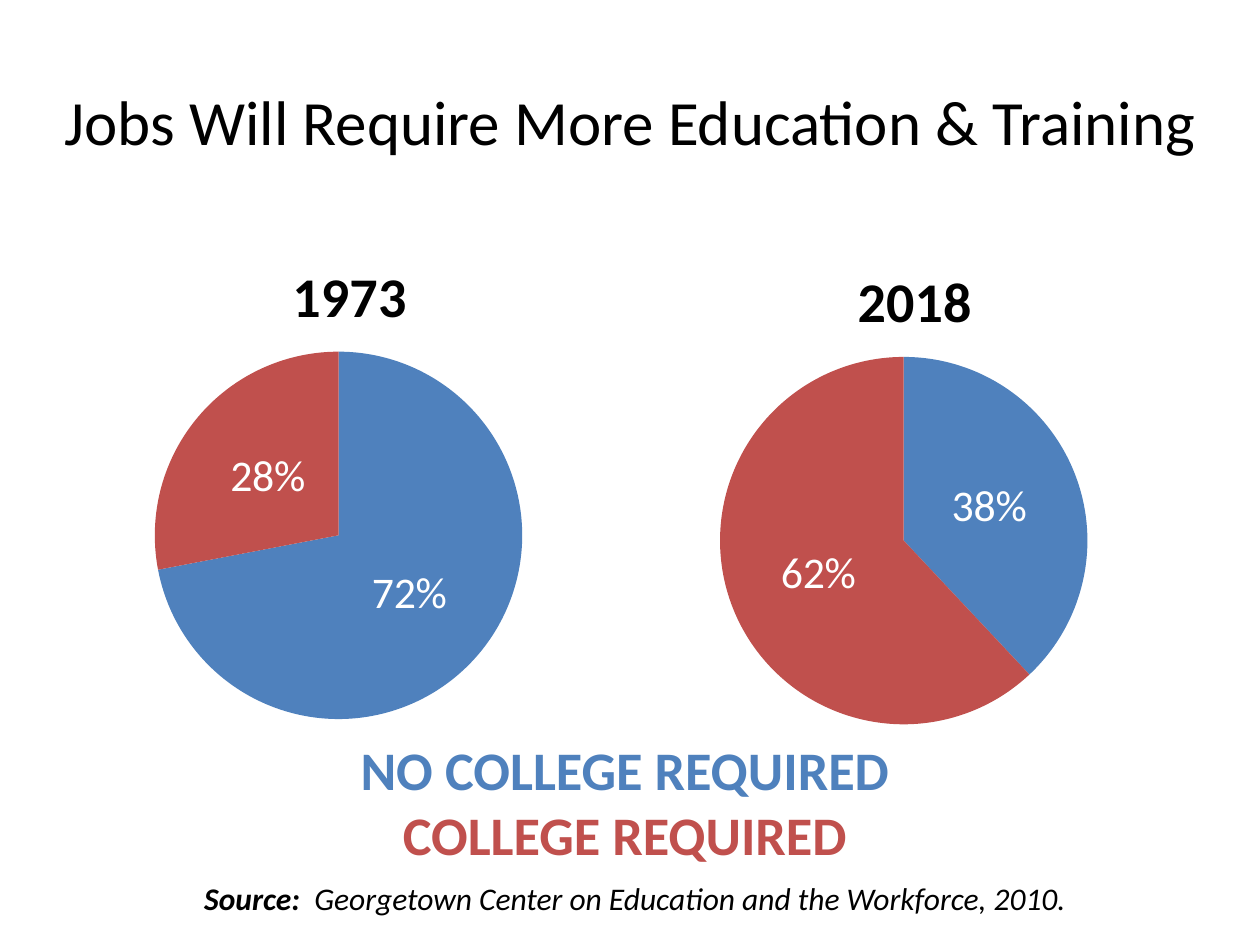
from lxml import etree
from pptx import Presentation
from pptx.chart.data import CategoryChartData
from pptx.dml.color import RGBColor
from pptx.enum.chart import XL_CHART_TYPE, XL_LABEL_POSITION
from pptx.enum.text import MSO_ANCHOR, PP_ALIGN
from pptx.oxml.ns import qn
from pptx.util import Pt

PIE = XL_CHART_TYPE.PIE
MID = XL_LABEL_POSITION.CENTER
CENTER = PP_ALIGN.CENTER
MIDDLE = MSO_ANCHOR.MIDDLE
BLACK, WHITE, BLUE, RED = "000000", "FFFFFF", "4F81BD", "C0504D"


def color(hex):
    return RGBColor.from_string(hex)


def layout(**vals):
    root = etree.Element(qn("c:layout"))
    node = etree.SubElement(root, qn("c:manualLayout"))
    for name, val in vals.items():
        etree.SubElement(node, qn("c:" + name)).set("val", str(val))
    return root


class Deck:
    face = "Calibri"

    def __init__(self, slide):
        self.slide = slide

    def style(self, font, hex, **form):
        for name, val in {"name": self.face, **form}.items():
            setattr(font, name, val)
        font.color.rgb = color(hex)

    def fill(self, frame, lines):
        frame.word_wrap = True
        for i, runs in enumerate(lines):
            par = frame.add_paragraph() if i else frame.paragraphs[0]
            par.alignment = CENTER
            for text, hex, form in runs:
                run = par.add_run()
                run.text = text
                self.style(run.font, hex, **form)

    def place(self, shape, left, top, width, height):
        box = {"left": left, "top": top, "width": width, "height": height}
        for name, val in box.items():
            setattr(shape, name, Pt(val))

    def title(self, text, box, size):
        shape = self.slide.shapes.title
        self.place(shape, *box)
        shape.text_frame.vertical_anchor = MIDDLE
        self.fill(shape.text_frame, [[(text, BLACK, {"size": Pt(size)})]])

    def text(self, box, lines):
        shape = self.slide.shapes.add_textbox(*map(Pt, box))
        self.fill(shape.text_frame, lines)

    def pie(self, year, vals, left, top):
        data = CategoryChartData()
        data.categories = ["1", "2"]
        data.add_series(year, vals)
        box = map(Pt, (left, top, 306, 300))
        chart = self.slide.shapes.add_chart(PIE, *box, data).chart
        self.style(chart.font, BLACK, size=Pt(18))
        chart.has_legend = False
        chart.has_title = True
        head = chart.chart_title
        self.fill(head.text_frame, [[(year, BLACK, {"size": Pt(32), "bold": True})]])
        root = head._element
        for old in root.findall(qn("c:layout")):
            root.remove(old)
        root.find(qn("c:tx")).addnext(layout(xMode="edge", yMode="edge", x=0.39, y=0.06))

        area = chart._chartSpace.chart.plotArea
        for old in area.findall(qn("c:layout")):
            area.remove(old)
        area.insert(0, layout(layoutTarget="inner", xMode="edge", yMode="edge",
                              x=0.15, y=0.26, w=0.69, h=0.7))

        plot = chart.plots[0]
        plot.vary_by_categories = True
        for i, hex in enumerate((BLUE, RED)):
            part = plot.series[0].points[i].format
            part.fill.solid()
            part.fill.fore_color.rgb = color(hex)
            part.line.fill.background()
        plot.has_data_labels = True
        tags = plot.data_labels
        form = {"show_percentage": True, "show_value": False, "number_format": "0%",
                "number_format_is_linked": False, "position": MID}
        for name, val in form.items():
            setattr(tags, name, val)
        self.style(tags.font, WHITE, size=Pt(25))


def main():
    prs = Presentation()
    prs.slide_width, prs.slide_height = Pt(720), Pt(540)
    deck = Deck(prs.slides.add_slide(prs.slide_layouts[5]))
    deck.title("Jobs Will Require More Education & Training", (24, 24, 672, 90), 36)
    deck.pie("1973", (72, 28), 42, 123)
    deck.pie("2018", (38, 62), 365, 126)
    bold = {"size": Pt(31), "bold": True}
    deck.text((120, 417, 474, 82), [
        [("NO COLLEGE REQUIRED", BLUE, bold)],
        [("COLLEGE REQUIRED", RED, bold)],
    ])
    note = {"size": Pt(18), "italic": True}
    deck.text((6, 499, 714, 29), [[
        ("Source:  ", BLACK, {**note, "bold": True}),
        ("Georgetown Center on Education and the Workforce, 2010.", BLACK, note),
    ]])
    prs.save("out.pptx")


if __name__ == "__main__":
    main()
